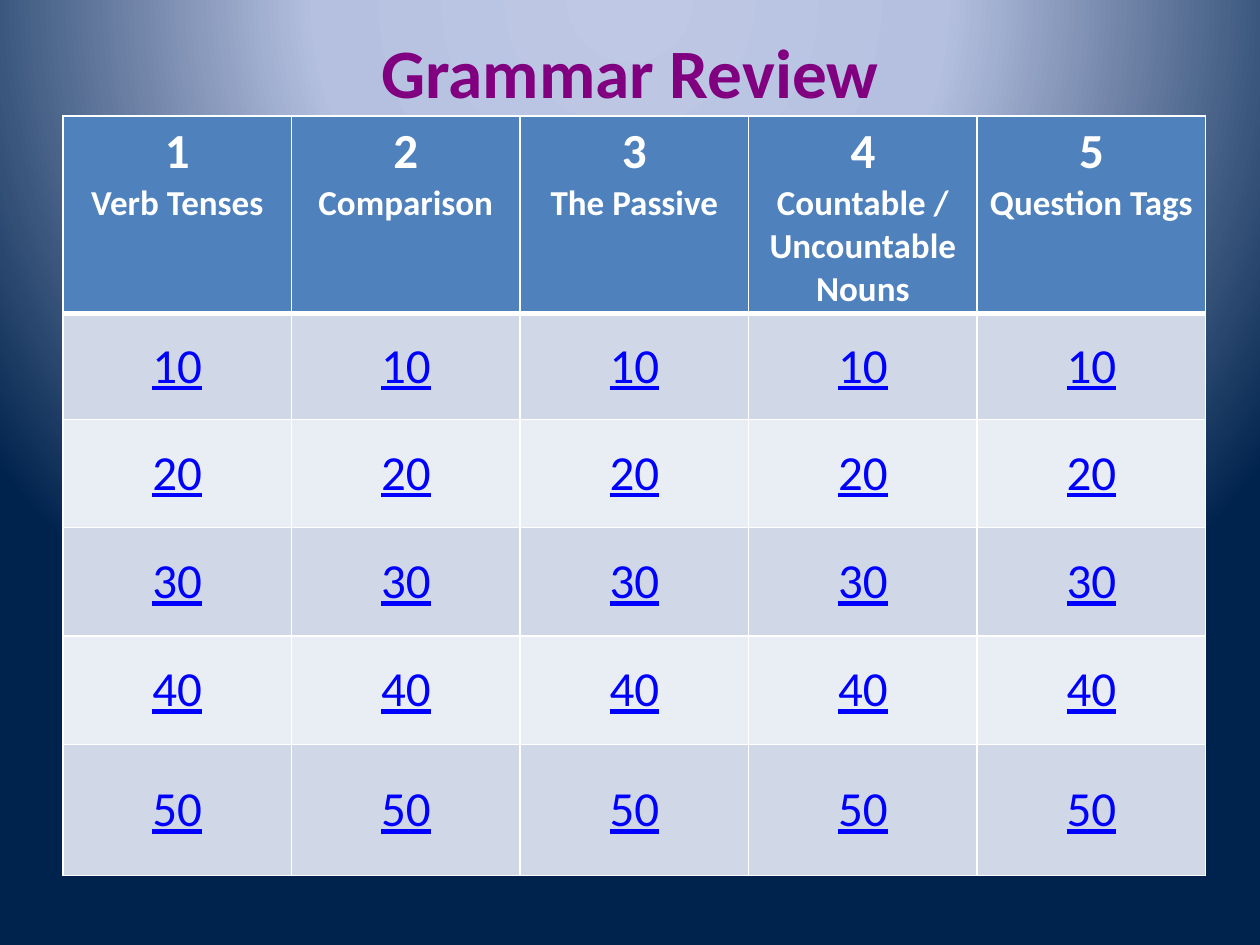
import lxml.etree
import pptx
import pptx.dml.color
import pptx.enum.text
import pptx.oxml
import pptx.oxml.ns
import pptx.util

Inches = pptx.util.Inches


def color(hex_string):
    return pptx.dml.color.RGBColor.from_string(hex_string)


def add_run(paragraph, text, size, hex_string, bold=False, underline=False):
    paragraph.alignment = pptx.enum.text.PP_ALIGN.CENTER
    run = paragraph.add_run()
    run.text = text
    run.font.name = "Calibri"
    run.font.size = pptx.util.Pt(size)
    run.font.color.rgb = color(hex_string)
    run.font.bold = bold
    run.font.underline = underline


presentation = pptx.Presentation()
presentation.slide_width = Inches(10)
presentation.slide_height = Inches(7.5)
slide = presentation.slides.add_slide(presentation.slide_layouts[6])

# Background: radial gradient centred above the slide
slide.background.fill.solid()
background = slide.element.find(".//" + pptx.oxml.ns.qn("p:bgPr"))
stops = "".join(
    f'<a:gs pos="{percent * 1000}"><a:srgbClr val="{hex_string}"/></a:gs>'
    for percent, hex_string in [(0, "BFC9E5"), (40, "B5C0E0"), (100, "00234D")]
)
background.replace(background[0], pptx.oxml.parse_xml(
    f'<a:gradFill {pptx.oxml.ns.nsdecls("a")} rotWithShape="1"><a:gsLst>{stops}</a:gsLst>'
    '<a:path path="circle"><a:fillToRect l="50000" t="-80000" r="50000" b="180000"/></a:path>'
    "</a:gradFill>"
))

# Title
title = slide.shapes.add_textbox(Inches(0.5), Inches(0.3), Inches(9), Inches(0.53))
title.text_frame.word_wrap = True
title.text_frame.vertical_anchor = pptx.enum.text.MSO_ANCHOR.MIDDLE
add_run(title.text_frame.paragraphs[0], "Grammar Review", 39.6, "800080", bold=True)

# Question board: one column per topic, one row per score
topics = ["Verb Tenses", "Comparison", "The Passive",
          "Countable / Uncountable Nouns", "Question Tags"]
scores = [10, 20, 30, 40, 50]
row_heights = [1.53, 0.84, 0.86, 0.86, 0.86, 1.04]
board_width = Inches(9.07)
board = slide.shapes.add_table(
    len(row_heights), len(topics), Inches(0.5), Inches(0.92),
    board_width, Inches(sum(row_heights))
).table
for row, height in zip(board.rows, row_heights):
    row.height = Inches(height)
for column in board.columns:
    column.width = board_width // len(topics)

# Header cells
for number, topic in enumerate(topics, start=1):
    cell = board.cell(0, number - 1)
    cell.fill.solid()
    cell.fill.fore_color.rgb = color("4F81BD")
    add_run(cell.text_frame.paragraphs[0], str(number), 28, "FFFFFF", bold=True)
    add_run(cell.text_frame.add_paragraph(), topic, 20, "FFFFFF", bold=True)

# Score cells in alternating bands
for row_index, score in enumerate(scores, start=1):
    for column_index in range(len(topics)):
        cell = board.cell(row_index, column_index)
        cell.fill.solid()
        cell.fill.fore_color.rgb = color("D0D8E8" if row_index % 2 else "E9EDF4")
        cell.vertical_anchor = pptx.enum.text.MSO_ANCHOR.MIDDLE
        add_run(cell.text_frame.paragraphs[0], str(score), 28, "0000FF", underline=True)

# White cell borders, thicker between header and scores
for row_index, row in enumerate(board.rows):
    for cell in row.cells:
        properties = cell._tc.get_or_add_tcPr()
        for position, side in enumerate(["lnL", "lnR", "lnT", "lnB"]):
            thick = (row_index, side) in [(0, "lnB"), (1, "lnT")]
            properties.insert(position, pptx.oxml.parse_xml(
                f'<a:{side} {pptx.oxml.ns.nsdecls("a")} w="{pptx.util.Pt(3 if thick else 1)}">'
                f'<a:solidFill><a:srgbClr val="FFFFFF"/></a:solidFill></a:{side}>'
            ))

presentation.save("out.pptx")
